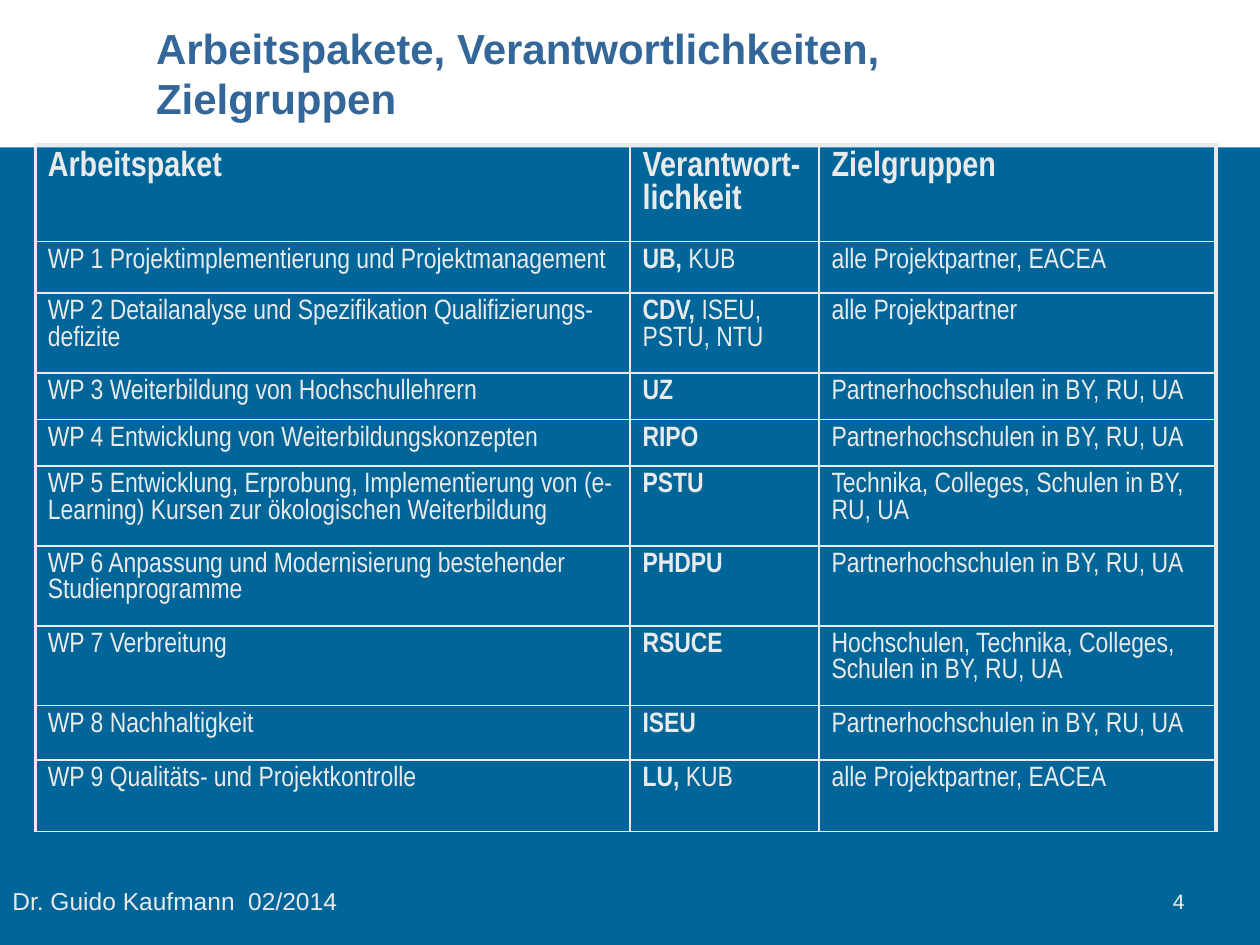
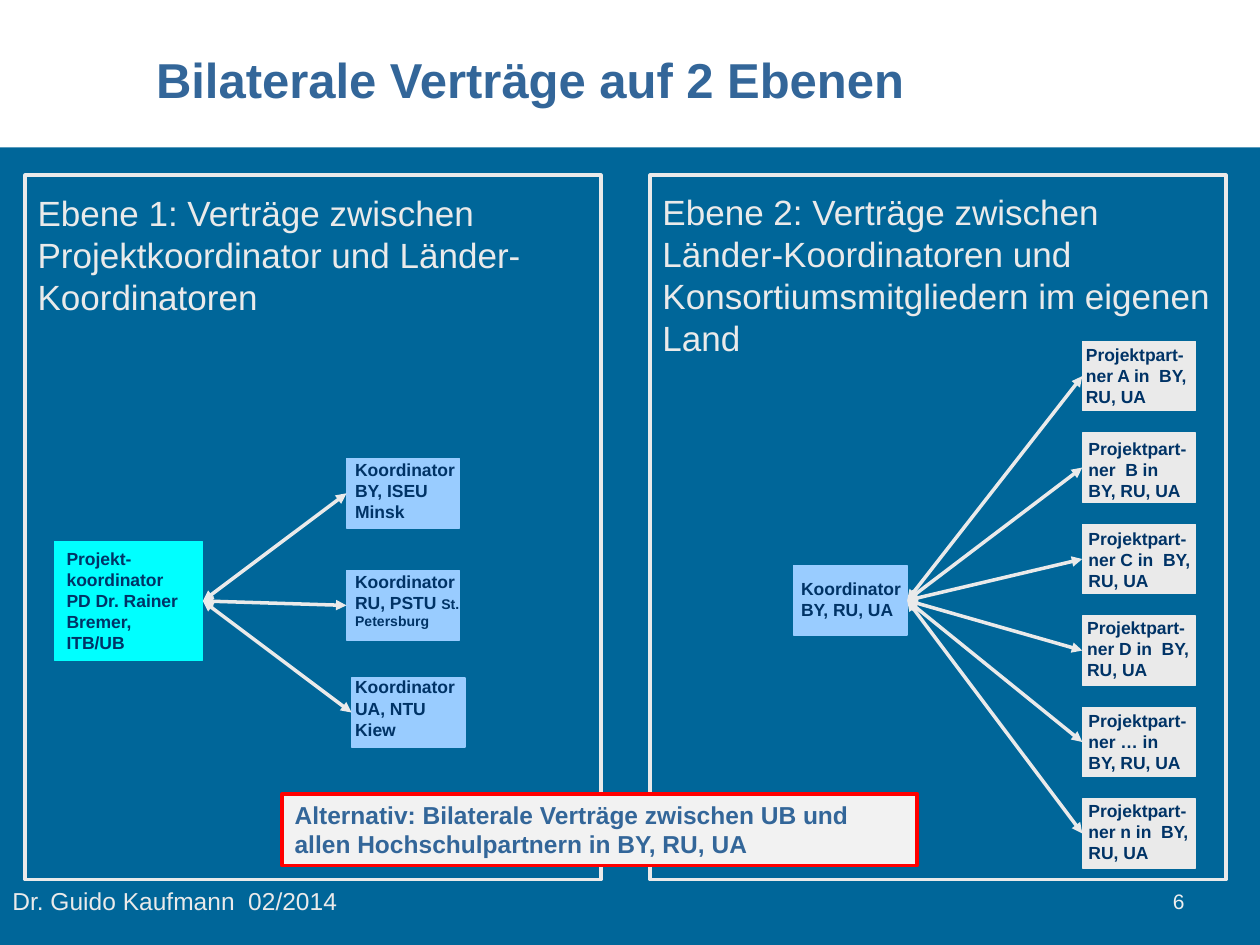
from lxml import etree
from pptx import Presentation
from pptx.dml.color import RGBColor
from pptx.enum.shapes import MSO_CONNECTOR, MSO_SHAPE
from pptx.enum.text import MSO_ANCHOR, PP_ALIGN
from pptx.oxml import parse_xml
from pptx.oxml.ns import nsdecls, qn
from pptx.util import Inches, Pt

COLORS = {
    "ground": "006699", "band": "FFFFFF", "title": "336699", "light": "EAEAEA",
    "number": "EFEFEF", "node_text": "003366", "project": "00FFFF",
    "country": "99CCFF", "note": "F2F2F2", "alert": "FF0000",
}
FONT, TABLE_FONT = "Arial", "Arial Narrow"
NODE_SIZE = (0.9, 0.55)

HEADINGS = ["Arbeitspaket", "Verantwort-lichkeit", "Zielgruppen"]
PARTNER_UNIVERSITIES = "Partnerhochschulen in BY, RU, UA"
# work package, lead partner, further partners, target groups, row height
WORK_PACKAGES = [
    ("WP 1 Projektimplementierung und Projektmanagement",
     "UB, ", "KUB", "alle Projektpartner, EACEA", 0.41),
    ("WP 2 Detailanalyse und Spezifikation Qualifizierungs-defizite",
     "CDV, ", "ISEU, PSTU, NTU", "alle Projektpartner", 0.63),
    ("WP 3 Weiterbildung von Hochschullehrern",
     "UZ", "", PARTNER_UNIVERSITIES, 0.37),
    ("WP 4 Entwicklung von Weiterbildungskonzepten",
     "RIPO", "", PARTNER_UNIVERSITIES, 0.37),
    ("WP 5 Entwicklung, Erprobung, Implementierung von (e-Learning) Kursen "
     "zur ökologischen Weiterbildung",
     "PSTU", "", "Technika, Colleges, Schulen in BY, RU, UA", 0.63),
    ("WP 6 Anpassung und Modernisierung bestehender Studienprogramme",
     "PHDPU", "", PARTNER_UNIVERSITIES, 0.63),
    ("WP 7 Verbreitung",
     "RSUCE", "", "Hochschulen, Technika, Colleges, Schulen in BY, RU, UA", 0.63),
    ("WP 8 Nachhaltigkeit", "ISEU", "", PARTNER_UNIVERSITIES, 0.43),
    ("WP 9 Qualitäts- und Projektkontrolle",
     "LU, ", "KUB", "alle Projektpartner, EACEA", 0.57),
]
# label, label offset from its node
PARTNERS = [
    ("Projektpart-ner A in  BY, RU, UA", (-0.07, -0.03)),
    ("Projektpart-ner  B in  BY, RU, UA", (-0.05, -0.01)),
    ("Projektpart-ner C in  BY, RU, UA", (-0.05, -0.02)),
    ("Projektpart-ner D in  BY, RU, UA", (-0.06, -0.04)),
    ("Projektpart-ner … in  BY, RU, UA", (-0.05, -0.03)),
    ("Projektpart-ner n in  BY, RU, UA", (-0.05, -0.04)),
]


def rgb(name):
    return RGBColor.from_string(COLORS[name])


def set_font(paragraph, size, color, bold=False, face=FONT):
    font = paragraph.font
    font.name, font.size, font.bold = face, Pt(size), bold
    font.color.rgb = rgb(color)


def write(frame, text, size, color, bold=False, align=PP_ALIGN.LEFT,
          anchor=MSO_ANCHOR.TOP):
    """Fill a frame with one paragraph; a list of (text, size) gives several runs."""
    frame.word_wrap = True
    frame.vertical_anchor = anchor
    paragraph = frame.paragraphs[0]
    paragraph.alignment = align
    set_font(paragraph, size, color, bold)
    for part, part_size in [(text, size)] if isinstance(text, str) else text:
        run = paragraph.add_run()
        run.text = part
        if part_size != size:
            run.font.size = Pt(part_size)


def add_text(slide, box, text, size, color, **style):
    label = slide.shapes.add_textbox(*map(Inches, box))
    write(label.text_frame, text, size, color, **style)


def add_rect(slide, box, fill=None, line=None, width=0.75):
    rect = slide.shapes.add_shape(MSO_SHAPE.RECTANGLE, *map(Inches, box))
    rect.shadow.inherit = False
    if fill:
        rect.fill.solid()
        rect.fill.fore_color.rgb = rgb(fill)
    else:
        rect.fill.background()
    if line:
        rect.line.color.rgb = rgb(line)
        rect.line.width = Pt(width)
    else:
        rect.line.fill.background()
    return rect


def add_double_arrow(slide, start, end):
    arrow = slide.shapes.add_connector(
        MSO_CONNECTOR.STRAIGHT, *map(Inches, (*start, *end)))
    arrow.line.color.rgb = rgb("light")
    arrow.line.width = Pt(2)
    outline = arrow.line._get_or_add_ln()
    for tip in ("a:headEnd", "a:tailEnd"):
        etree.SubElement(outline, qn(tip), type="triangle")
    etree.SubElement(arrow._element.spPr, qn("a:effectLst"))


def add_slide(prs, title, title_box, title_size, number):
    """Slide with the background, title band, footer and number all slides share."""
    slide = prs.slides.add_slide(prs.slide_layouts[6])
    slide.background.fill.solid()
    slide.background.fill.fore_color.rgb = rgb("ground")
    add_rect(slide, (0, 0, 10, 1.17), "band")
    add_text(slide, (0, 6.98, 3.27, 0.52), "Dr. Guido Kaufmann  02/2014", 14, "light")
    add_text(slide, (7.17, 6.95, 2.33, 0.4), number, 12, "number",
             align=PP_ALIGN.RIGHT, anchor=MSO_ANCHOR.MIDDLE)
    add_text(slide, title_box, title, title_size, "title", bold=True)
    return slide


def set_borders(cell, **widths):
    for index, (side, width) in enumerate(widths.items()):
        border = parse_xml(
            f'<a:ln{side} {nsdecls("a")} w="{Pt(width)}"><a:solidFill>'
            f'<a:srgbClr val="{COLORS["light"]}"/></a:solidFill></a:ln{side}>')
        cell._tc.get_or_add_tcPr().insert(index, border)


def add_package_table(slide, box):
    widths = [4.72, 1.5, 3.15]
    heights = [0.76] + [package[-1] for package in WORK_PACKAGES]
    rows = [[[(heading, True)] for heading in HEADINGS]]
    for package, lead, others, groups, _ in WORK_PACKAGES:
        responsible = [(lead, True)] + ([(others, False)] if others else [])
        rows.append([[(package, False)], responsible, [(groups, False)]])

    table = slide.shapes.add_table(len(rows), len(widths), *map(Inches, box)).table
    table.first_row = table.horz_banding = False
    for column, width in zip(table.columns, widths):
        column.width = Inches(width)
    for r, (height, row) in enumerate(zip(heights, rows)):
        table.rows[r].height = Inches(height)
        for c, parts in enumerate(row):
            cell = table.cell(r, c)
            cell.fill.background()
            paragraph = cell.text_frame.paragraphs[0]
            set_font(paragraph, 16 if r else 20, "light", parts[0][1], TABLE_FONT)
            for text, bold in parts:
                run = paragraph.add_run()
                run.text = text
                if bold != parts[0][1]:
                    run.font.bold = bold
            set_borders(cell, L=1 if c else 2.25,
                        R=2.25 if c == len(widths) - 1 else 1,
                        T=1 if r else 2.25, B=1)


def add_node(slide, left, top, fill, label, offset, label_width=1.02):
    """Box with a label beside its corner; returns the middle of its left edge."""
    add_rect(slide, (left, top, *NODE_SIZE), fill, fill)
    add_text(slide, (left + offset[0], top + offset[1], label_width, 0.6), label, 10,
             "node_text", bold=True)
    return left, top + NODE_SIZE[1] / 2


def add_panel(slide, box, heading, heading_drop):
    left, top, width, _ = box
    add_rect(slide, box, line="light", width=2)
    add_text(slide, (left, top + heading_drop, width, 1.4), heading, 20, "light")


def add_level_one(slide, box):
    left, top = box[:2]
    project_box = (left + 0.23, top + 2.91, 1.18, 0.94)
    project = add_rect(slide, project_box, "project", "project")
    write(project.text_frame, "Projekt-koordinator PD Dr. Rainer Bremer, ITB/UB", 10,
          "node_text", bold=True)
    hub = (project_box[0] + project_box[2], project_box[1] + project_box[3] / 2)
    coordinators = [
        (2.55, 2.25, "Koordinator BY, ISEU Minsk", (-0.03, -0.05)),
        (2.59, 3.99, "Koordinator UA, NTU Kiew", (-0.07, -0.06)),
        (2.55, 3.14, [("Koordinator RU, PSTU ", 10), ("St. Petersburg", 8)],
         (-0.03, -0.05)),
    ]
    for dx, dy, label, offset in coordinators:
        end = add_node(slide, left + dx, top + dy, "country", label, offset, 1.05)
        add_double_arrow(slide, hub, end)
    add_panel(slide, box, "Ebene 1: Verträge zwischen Projektkoordinator und "
              "Länder-Koordinatoren", 0.08)


def add_level_two(slide, box):
    left, top = box[:2]
    x, y = add_node(slide, left + 1.14, top + 3.1, "country",
                    "Koordinator BY, RU, UA", (-0.04, 0.05))
    hub = (x + NODE_SIZE[0], y)
    step = 3.63 / (len(PARTNERS) - 1)
    for i, (label, offset) in enumerate(PARTNERS):
        end = add_node(slide, left + 3.43, top + 1.32 + step * i, "light", label, offset)
        add_double_arrow(slide, hub, end)
    add_panel(slide, box, "Ebene 2: Verträge zwischen Länder-Koordinatoren und "
              "Konsortiumsmitgliedern im eigenen Land", 0.07)


def add_alternative(slide, box):
    note = add_rect(slide, box, "note", "alert", 2)
    write(note.text_frame, "Alternativ: Bilaterale Verträge zwischen UB und allen "
          "Hochschulpartnern in BY, RU, UA", 14, "title", bold=True)


def main():
    prs = Presentation()
    prs.slide_width, prs.slide_height = Inches(10), Inches(7.5)

    packages = add_slide(prs, "Arbeitspakete, Verantwortlichkeiten, Zielgruppen",
                         (1.14, 0.13, 6.06, 0.91), 24, "4")
    add_package_table(packages, (0.28, 1.15, 9.37, 5.44))

    contracts = add_slide(prs, "Bilaterale Verträge auf 2 Ebenen",
                          (1.14, 0.34, 6.22, 0.57), 28, "6")
    add_level_one(contracts, (0.2, 1.39, 4.57, 5.59))
    add_level_two(contracts, (5.16, 1.39, 4.57, 5.59))
    add_alternative(contracts, (2.24, 6.3, 5.04, 0.57))

    prs.save("out.pptx")


if __name__ == "__main__":
    main()
